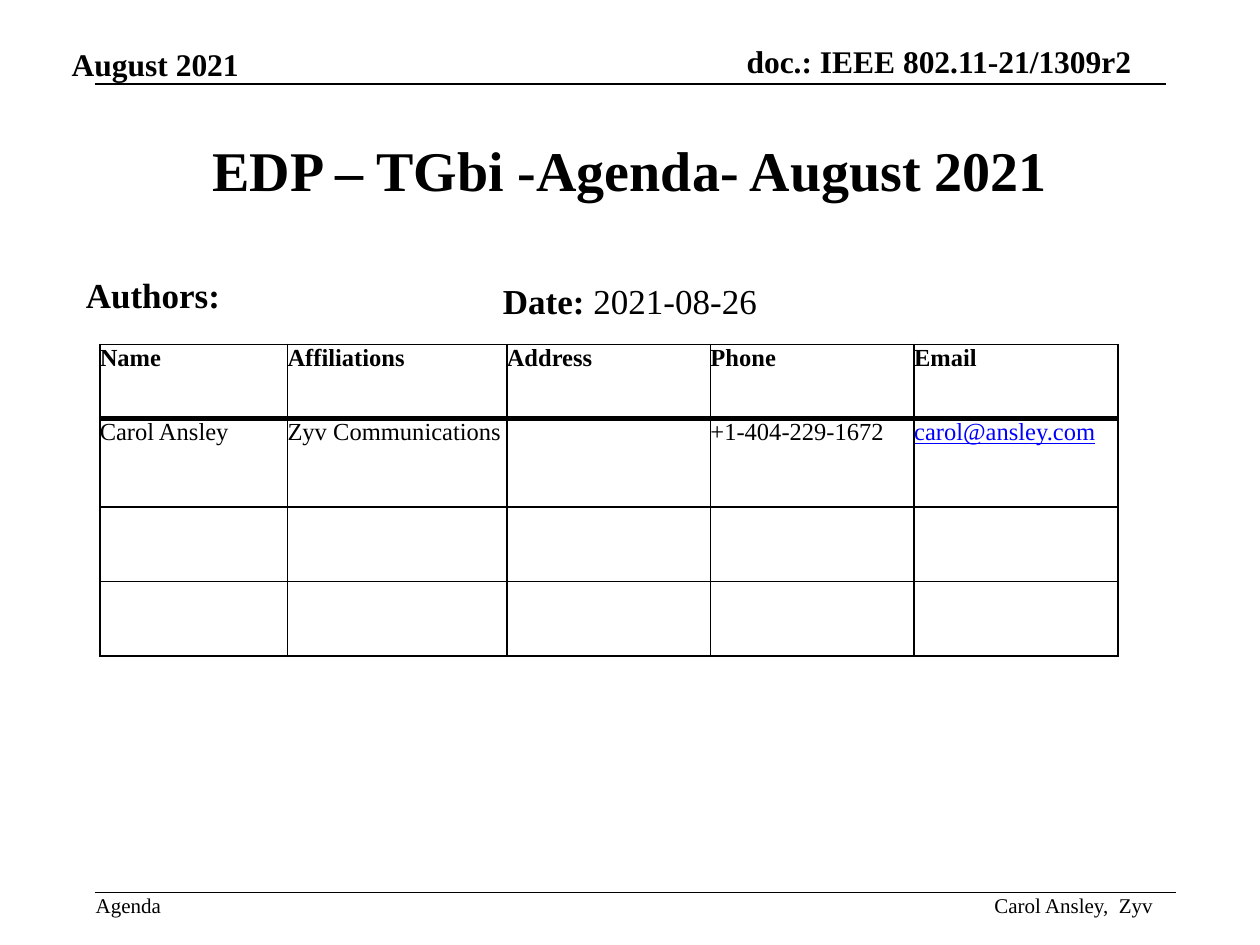
"""Build the title slide of a task group agenda, with its table of authors."""
from lxml import etree
from pptx import Presentation
from pptx.dml.color import RGBColor
from pptx.enum.shapes import MSO_CONNECTOR
from pptx.enum.text import MSO_ANCHOR, MSO_AUTO_SIZE, PP_ALIGN
from pptx.oxml.ns import qn
from pptx.util import Pt

BLACK = RGBColor(0x00, 0x00, 0x00)
BLUE = RGBColor(0x00, 0x00, 0xFF)
FONT = "Times New Roman"
STRAIGHT = MSO_CONNECTOR.STRAIGHT
TOP, MIDDLE, BOTTOM = MSO_ANCHOR.TOP, MSO_ANCHOR.MIDDLE, MSO_ANCHOR.BOTTOM
LEFT, CENTER, RIGHT = PP_ALIGN.LEFT, PP_ALIGN.CENTER, PP_ALIGN.RIGHT
GROW = MSO_AUTO_SIZE.SHAPE_TO_FIT_TEXT

COLUMNS = [107.3, 125.3, 116.4, 116.4, 116.4]
ROWS = [42.5, 50.5, 42.5, 42.5]
AUTHORS = [
    ["Name", "Affiliations", "Address", "Phone", "Email"],
    ["Carol Ansley", "Zyv Communications", "", "+1-404-229-1672", "carol@ansley.com"],
    [""] * 5,
    [""] * 5,
]
THIN, THICK = 0.96, 3


def add_run(p, text, size, bold=False, color=BLACK, underline=None):
    r = p.add_run()
    r.text = text
    r.font.name = FONT
    r.font.size = Pt(size)
    r.font.bold = bold
    r.font.underline = underline
    r.font.color.rgb = color


def add_text(s, box, runs, size, align=LEFT, anchor=TOP, inset=0, wrap=False, hanging=0):
    tf = s.shapes.add_textbox(*map(Pt, box)).text_frame
    tf.word_wrap = wrap
    tf.auto_size = GROW
    tf.vertical_anchor = anchor
    tf.margin_left = tf.margin_top = tf.margin_right = tf.margin_bottom = Pt(inset)
    p = tf.paragraphs[0]
    p.alignment = align
    if hanging:
        p.space_before = Pt(4)
        pPr = p._p.get_or_add_pPr()
        pPr.set("marL", str(Pt(hanging)))
        pPr.set("indent", str(-Pt(hanging)))
    for text, bold in runs:
        add_run(p, text, size, bold)


def add_rule(s, left, right, y):
    line = s.shapes.add_connector(STRAIGHT, Pt(left), Pt(y), Pt(right), Pt(y))
    line.line.color.rgb = BLACK
    line.line.width = Pt(1)
    etree.SubElement(line._element.spPr, qn("a:effectLst"))


def set_borders(cell, top, bottom):
    tcPr = cell._tc.get_or_add_tcPr()
    sides = [("a:lnL", THIN), ("a:lnR", THIN), ("a:lnT", top), ("a:lnB", bottom)]
    for i, (tag, width) in enumerate(sides):
        ln = etree.Element(qn(tag), w=str(Pt(width)))
        fill = etree.SubElement(ln, qn("a:solidFill"))
        etree.SubElement(fill, qn("a:srgbClr"), val=str(BLACK))
        tcPr.insert(i, ln)


def add_authors(s, left, top):
    frame = s.shapes.add_table(len(ROWS), len(COLUMNS), Pt(left), Pt(top),
                               Pt(sum(COLUMNS)), Pt(sum(ROWS)))
    table = frame.table
    table.first_row = table.horz_banding = False
    for column, width in zip(table.columns, COLUMNS):
        column.width = Pt(width)
    for i, (height, values) in enumerate(zip(ROWS, AUTHORS)):
        table.rows[i].height = Pt(height)
        for j, text in enumerate(values):
            cell = table.cell(i, j)
            cell.fill.background()
            cell.margin_left = cell.margin_right = cell.margin_top = cell.margin_bottom = 0
            set_borders(cell, THICK if i == 1 else THIN, THICK if i == 0 else THIN)
            if text:
                email = "@" in text
                add_run(cell.text_frame.paragraphs[0], text, 14, i == 0,
                        BLUE if email else BLACK, email or None)


def main():
    prs = Presentation()
    prs.slide_width, prs.slide_height = Pt(720), Pt(540)
    s = prs.slides.add_slide(prs.slide_layouts[6])
    add_text(s, (41, 26, 96.5, 21.6), [("August 2021", True)], 18, anchor=BOTTOM)
    add_text(s, (423.4, 23.8, 223.2, 21.6), [("doc.: IEEE 802.11-21/1309r2", True)], 18,
             RIGHT, BOTTOM)
    add_rule(s, 54, 666, 48)
    add_rule(s, 54, 672, 510)
    add_text(s, (54.7, 510, 38, 14.4), [("Agenda", False)], 12)
    add_text(s, (565.2, 510, 93.6, 14.4), [("Carol Ansley,  Zyv", False)], 12, RIGHT, BOTTOM)
    add_text(s, (54, 73.4, 612, 46), [("EDP – TGbi -Agenda- August 2021", True)], 32,
             CENTER, MIDDLE, 3.6, True)
    add_text(s, (54, 156, 612, 31.7), [("Date:", True), (" 2021-08-26", False)], 20,
             CENTER, TOP, 3.6, True, 27)
    add_text(s, (45.4, 152.6, 106.6, 29.5), [("Authors:", True)], 20,
             LEFT, TOP, 3.6, True, 27)
    add_authors(s, 57, 196.8)
    prs.save("out.pptx")


if __name__ == "__main__":
    main()
